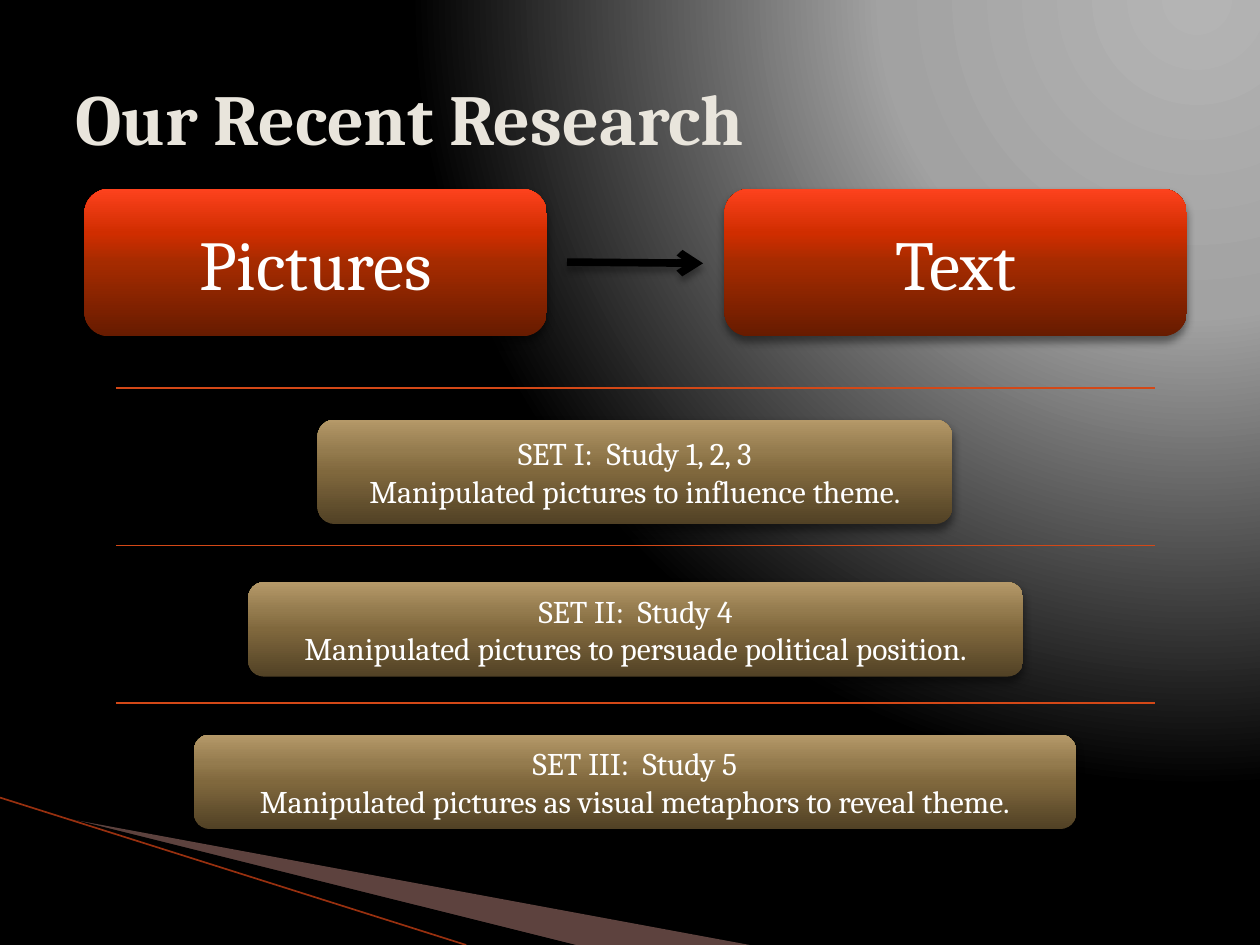
from dataclasses import dataclass

from lxml import etree
from pptx import Presentation
from pptx import util as u
from pptx.dml.color import RGBColor
from pptx.enum import shapes, text
from pptx.oxml import parse_xml
from pptx.oxml.ns import nsdecls, qn
from pptx.util import Inches

FONT = "Cambria"
BLACK = RGBColor(0x00, 0x00, 0x00)
WHITE = RGBColor(0xFF, 0xFF, 0xFF)
CREAM = RGBColor(0xE9, 0xE5, 0xDC)
ORANGE = RGBColor(0xD3, 0x48, 0x17)
RUST = RGBColor(0x98, 0x30, 0x0F)
PINK = RGBColor(0xE9, 0xA5, 0x9D)

Stops = list[tuple[int, RGBColor]]


def ramp(positions: tuple[int, ...], *colors: str) -> Stops:
    return [(pos, RGBColor.from_string(c)) for pos, c in zip(positions, colors)]


BOX_STOPS = (0, 50, 70, 100)
RED = ramp(BOX_STOPS, "671B00", "A52B00", "D02D00", "FD421D")
BRONZE = ramp(BOX_STOPS, "514125", "80683D", "947B4E", "B59969")
GREY = ramp((0, 40, 100), "B4B4B4", "A2A2A2", "000000")

UPWARD = '<a:lin ang="16200000" scaled="0"/>'
TOP_RIGHT = ('<a:path path="circle"><a:fillToRect l="95000" t="-106000" '
             'r="5000" b="206000"/></a:path>')


@dataclass
class Box:
    left: float
    top: float
    width: float
    height: float
    lines: tuple[str, ...]
    size: int
    stops: Stops


BOXES = [
    Box(0.67, 1.5, 3.67, 1.17, ("Pictures",), 40, RED),
    Box(5.75, 1.5, 3.67, 1.17, ("Text",), 40, RED),
    Box(2.52, 3.33, 5.04, 0.83,
        ("SET I:  Study 1, 2, 3", "Manipulated pictures to influence theme."), 18, BRONZE),
    Box(1.97, 4.62, 6.15, 0.75,
        ("SET II:  Study 4", "Manipulated pictures to persuade political position."),
        18, BRONZE),
    Box(1.54, 5.83, 7, 0.75,
        ("SET III:  Study 5", "Manipulated pictures as visual metaphors to reveal theme."),
        18, BRONZE),
]
DIVIDER_TOPS = (3.08, 4.33, 5.58)


def gradient(stops: Stops, direction: str) -> str:
    marks = "".join(f'<a:gs pos="{pos * 1000}"><a:srgbClr val="{color}"/></a:gs>'
                    for pos, color in stops)
    return (f'<a:gradFill {nsdecls("a")} rotWithShape="1"><a:gsLst>{marks}</a:gsLst>'
            f'{direction}</a:gradFill>')


def add_shadow(s, alpha: int, blur: float) -> None:
    s._element.spPr.append(parse_xml(
        f'<a:effectLst {nsdecls("a")}><a:outerShdw blurRad="{u.Pt(blur)}" '
        f'dist="{u.Pt(3)}" dir="5400000" rotWithShape="0"><a:srgbClr val="{BLACK}">'
        f'<a:alpha val="{alpha * 1000}"/></a:srgbClr></a:outerShdw></a:effectLst>'))


def write(s, *lines: str, size: float, color: RGBColor = WHITE, bold: bool = False,
          align=text.PP_ALIGN.CENTER) -> None:
    tf = s.text_frame
    tf.word_wrap = True
    tf.vertical_anchor = text.MSO_ANCHOR.MIDDLE
    for i, line in enumerate(lines):
        p = tf.paragraphs[0] if i == 0 else tf.add_paragraph()
        p.alignment = align
        r = p.add_run()
        r.text = line
        r.font.name, r.font.size, r.font.bold = FONT, u.Pt(size), bold
        r.font.color.rgb = color


def add_box(slide, box: Box) -> None:
    s = slide.shapes.add_shape(
        shapes.MSO_SHAPE.ROUNDED_RECTANGLE,
        Inches(box.left), Inches(box.top), Inches(box.width), Inches(box.height))
    s.line.fill.background()
    spPr = s._element.spPr
    spPr.find(qn("a:prstGeom")).addnext(parse_xml(gradient(box.stops, UPWARD)))
    add_shadow(s, 45, 5)
    write(s, *box.lines, size=box.size)


def add_line(slide, x1: float, y1: float, x2: float, y2: float,
             color: RGBColor, width: float, arrow: bool = False) -> None:
    s = slide.shapes.add_connector(shapes.MSO_CONNECTOR.STRAIGHT,
                                   Inches(x1), Inches(y1), Inches(x2), Inches(y2))
    s.line.color.rgb = color
    s.line.width = u.Pt(width)
    if arrow:
        etree.SubElement(s.line._get_or_add_ln(), qn("a:tailEnd"), type="arrow")
        add_shadow(s, 35, 4)
    else:
        etree.SubElement(s._element.spPr, qn("a:effectLst"))


def add_wedge(slide, points: list[tuple[float, float]], color: RGBColor,
              alpha: int = 100) -> None:
    start, *rest = [(Inches(x), Inches(y)) for x, y in points]
    builder = slide.shapes.build_freeform(*start)
    builder.add_line_segments(rest, close=True)
    s = builder.convert_to_shape()
    s.shadow.inherit = False
    s.fill.solid()
    s.fill.fore_color.rgb = color
    s.line.fill.background()
    if alpha < 100:
        clr = s._element.spPr.find(qn("a:solidFill"))[0]
        etree.SubElement(clr, qn("a:alpha"), val=str(alpha * 1000))


def main() -> None:
    prs = Presentation()
    prs.slide_width, prs.slide_height = Inches(10), Inches(7.5)
    slide = prs.slides.add_slide(prs.slide_layouts[6])
    slide._element.cSld.insert(0, parse_xml(
        f'<p:bg {nsdecls("p", "a")}><p:bgPr>{gradient(GREY, TOP_RIGHT)}'
        '<a:effectLst/></p:bgPr></p:bg>'))

    add_wedge(slide, [(0.55, 6.5), (5.95, 7.5), (4.56, 7.5)], PINK, alpha=40)
    add_wedge(slide, [(0.53, 6.49), (4.57, 7.5), (3.72, 7.5)], BLACK)
    add_line(slide, 0, 6.33, 3.7, 7.5, RUST, 0.95)

    title = slide.shapes.add_textbox(Inches(0.5), Inches(0.3), Inches(9), Inches(1.25))
    write(title, "Our Recent Research", size=41, color=CREAM, bold=True,
          align=text.PP_ALIGN.LEFT)

    for box in BOXES:
        add_box(slide, box)
    add_line(slide, 4.5, 2.08, 5.58, 2.09, BLACK, 4.33, arrow=True)
    for top in DIVIDER_TOPS:
        add_line(slide, 0.92, top, 9.17, top, ORANGE, 0.75)

    prs.save("out.pptx")


if __name__ == "__main__":
    main()
